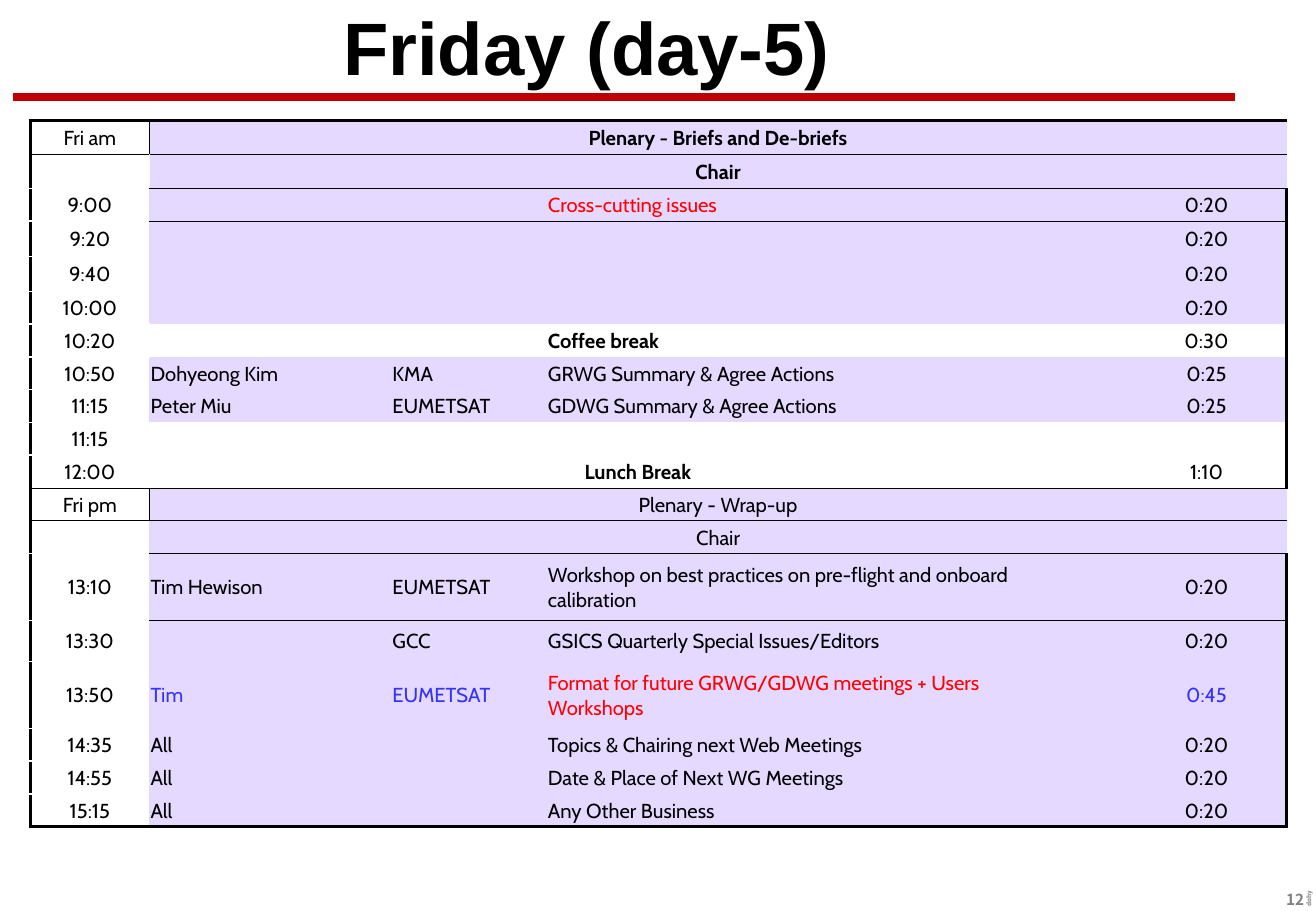
from lxml import etree
from pptx import Presentation
from pptx.dml.color import RGBColor
from pptx.enum import shapes, text
from pptx.oxml import ns
from pptx.util import Inches, Pt

COLORS = {"black": "000000", "white": "FFFFFF", "lilac": "E6D9FF", "red": "FF0000",
          "blue": "3333FF", "rule": "C00000", "grey": "808080"}
TITLE = "Friday (day-5)"
PAGE_NUMBER, AUTHOR_MARK = "12", "dohy"

# Time, speaker, agency, topic, spare column, duration
AGENDA = [
    ("Fri am", "Plenary - Briefs and De-briefs", "", "", "", ""),
    ("", "Chair", "", "", "", ""),
    ("9:00", "", "", "Cross-cutting issues", "", "0:20"),
    ("9:20", "", "", "", "", "0:20"),
    ("9:40", "", "", "", "", "0:20"),
    ("10:00", "", "", "", "", "0:20"),
    ("10:20", "", "", "Coffee break", "", "0:30"),
    ("10:50", "Dohyeong Kim", "KMA", "GRWG Summary & Agree Actions", "", "0:25"),
    ("11:15", "Peter Miu", "EUMETSAT", "GDWG Summary & Agree Actions", "", "0:25"),
    ("11:15", "", "", "", "", ""),
    ("12:00", "Lunch Break", "", "", "", "1:10"),
    ("Fri pm", "Plenary - Wrap-up", "", "", "", ""),
    ("", "Chair", "", "", "", ""),
    ("13:10", "Tim Hewison", "EUMETSAT",
     "Workshop on best practices on pre-flight and onboard calibration", "", "0:20"),
    ("13:30", "", "GCC", "GSICS Quarterly Special Issues/Editors", "", "0:20"),
    ("13:50", "Tim", "EUMETSAT",
     "Format for future GRWG/GDWG meetings + Users Workshops", "", "0:45"),
    ("14:35", "All", "", "Topics & Chairing next Web Meetings", "", "0:20"),
    ("14:55", "All", "", "Date & Place of Next WG Meetings", "", "0:20"),
    ("15:15", "All", "", "Any Other Business", "", "0:20"),
]
COLUMN_WIDTHS = [0.98, 1.99, 1.28, 4.31, 0.46, 1.32]
ROW_HEIGHT = 0.27
ROW_HEIGHTS = {0: 0.28, 1: 0.28, 3: 0.29, 4: 0.29, 13: 0.55, 14: 0.34, 15: 0.55}
LAST_ROW, LAST_COLUMN = len(AGENDA) - 1, len(COLUMN_WIDTHS) - 1

SESSION_ROWS, CHAIR_ROWS = (0, 11), (1, 12)
COFFEE_ROW, LUNCH_ROW = 6, 10
BREAK_ROWS = (COFFEE_ROW, 9, LUNCH_ROW)
MERGES = {0: 5, 1: 5, LUNCH_ROW: 4, 11: 5, 12: 5}  # row: last merged column
BOLD_CELLS = {(0, 1), (1, 1), (COFFEE_ROW, 3), (LUNCH_ROW, 1)}
TEXT_COLORS = {(2, 3): "red", (15, 1): "blue", (15, 2): "blue",
               (15, 3): "red", (15, 5): "blue"}
FRAME, THIN, GAP = ("black", 2.25), ("black", 0.5), ("white", 1)


def rgb(name):
    return RGBColor.from_string(COLORS[name])


def write(frame, content, *, font, size, color="black", bold=False, align="LEFT"):
    paragraph = frame.paragraphs[0]
    paragraph.alignment = getattr(text.PP_ALIGN, align)
    if not content:
        # Keeps an empty cell as low as a filled one
        etree.SubElement(paragraph._p, ns.qn("a:endParaRPr"), sz=str(size * 100))
        return
    run = paragraph.add_run()
    run.text = content
    run.font.name, run.font.size, run.font.bold = font, Pt(size), bold
    run.font.color.rgb = rgb(color)


def add_text(slide, content, box, anchor="TOP", rotation=0, wrap=True, **style):
    shape = slide.shapes.add_textbox(*map(Inches, box))
    shape.rotation = rotation
    shape.text_frame.word_wrap = wrap
    shape.text_frame.vertical_anchor = getattr(text.MSO_ANCHOR, anchor)
    write(shape.text_frame, content, **style)


def cell_borders(row, column):
    borders = {}
    if row in (1, COFFEE_ROW) and column == 0:
        borders["R"] = GAP
    if row == COFFEE_ROW and column > 0:
        borders.update(L=GAP, R=GAP)
    if row in SESSION_ROWS and column < 2:
        borders["R" if column == 0 else "L"] = THIN
    if column == 0:
        borders.update(L=FRAME, T=GAP, B=GAP)
    if column == LAST_COLUMN:
        borders["R"] = FRAME
    if row in SESSION_ROWS + (LUNCH_ROW,) or (row in CHAIR_ROWS and column > 0):
        borders["B"] = THIN
    above = row - 1
    if above in SESSION_ROWS + (LUNCH_ROW,) or (above in CHAIR_ROWS and column > 0):
        borders["T"] = THIN
    if row == 0:
        borders["T"] = FRAME
    if row == LAST_ROW:
        borders["B"] = FRAME
    return borders


def draw_borders(cell, borders):
    properties = cell._tc.get_or_add_tcPr()
    ordered = [side for side in "LRTB" if side in borders]
    for position, side in enumerate(ordered):
        color, width = borders[side]
        line = etree.Element(ns.qn("a:ln" + side), w=str(Pt(width)))
        fill = etree.SubElement(line, ns.qn("a:solidFill"))
        etree.SubElement(fill, ns.qn("a:srgbClr"), val=COLORS[color])
        properties.insert(position, line)


def add_agenda(slide):
    heights = [ROW_HEIGHTS.get(row, ROW_HEIGHT) for row in range(len(AGENDA))]
    frame = slide.shapes.add_table(
        len(AGENDA), len(COLUMN_WIDTHS), Inches(0.25), Inches(0.99),
        Inches(sum(COLUMN_WIDTHS)), Inches(sum(heights)))
    table = frame.table
    table.first_row = table.horz_banding = False
    # Table style without lines or fills
    table._tbl.tblPr.find(ns.qn("a:tableStyleId")).text = \
        "{2D5ABB26-0587-4C30-8999-92F81FD0307C}"
    for column, width in zip(table.columns, COLUMN_WIDTHS):
        column.width = Inches(width)
    for row, height in zip(table.rows, heights):
        row.height = Inches(height)
    for row, last in MERGES.items():
        table.cell(row, 1).merge(table.cell(row, last))

    for row, entries in enumerate(AGENDA):
        for column, content in enumerate(entries):
            cell = table.cell(row, column)
            cell.margin_left = cell.margin_right = cell.margin_top = Inches(0.01)
            cell.margin_bottom = 0
            cell.vertical_anchor = text.MSO_ANCHOR.MIDDLE
            plain = column == 0 or row in BREAK_ROWS
            cell.fill.solid()
            cell.fill.fore_color.rgb = rgb("white" if plain else "lilac")
            centred = column in (0, LAST_COLUMN) or (row in MERGES and column == 1)
            write(cell.text_frame, content, font="Cabin", size=12,
                  color=TEXT_COLORS.get((row, column), "black"),
                  bold=(row, column) in BOLD_CELLS,
                  align="CENTER" if centred else "LEFT")
            draw_borders(cell, cell_borders(row, column))


def main():
    presentation = Presentation()
    presentation.slide_width, presentation.slide_height = Inches(10.83), Inches(7.5)
    slide = presentation.slides.add_slide(presentation.slide_layouts[6])

    # Rule under the title
    rule = slide.shapes.add_connector(
        shapes.MSO_CONNECTOR.STRAIGHT, Inches(0.11), Inches(0.8), Inches(10.16), Inches(0.8))
    rule.line.color.rgb = rgb("rule")
    rule.line.width = Pt(4.5)
    etree.SubElement(rule._element.spPr, ns.qn("a:effectLst"))

    # Page number and author mark
    footer = dict(font="Noto Sans CJK KR", color="grey", bold=True)
    add_text(slide, PAGE_NUMBER, (9.9, 7.28, 0.93, 0.25), size=9, align="RIGHT", **footer)
    add_text(slide, AUTHOR_MARK, (10.2, 6.91, 1.14, 0.16), rotation=270, size=3.8, **footer)

    # Title and agenda
    add_text(slide, TITLE, (0.16, 0.08, 9.34, 0.6), anchor="MIDDLE",
             font="Arial", size=44, bold=True, align="CENTER")
    add_agenda(slide)
    presentation.save("out.pptx")


if __name__ == "__main__":
    main()
